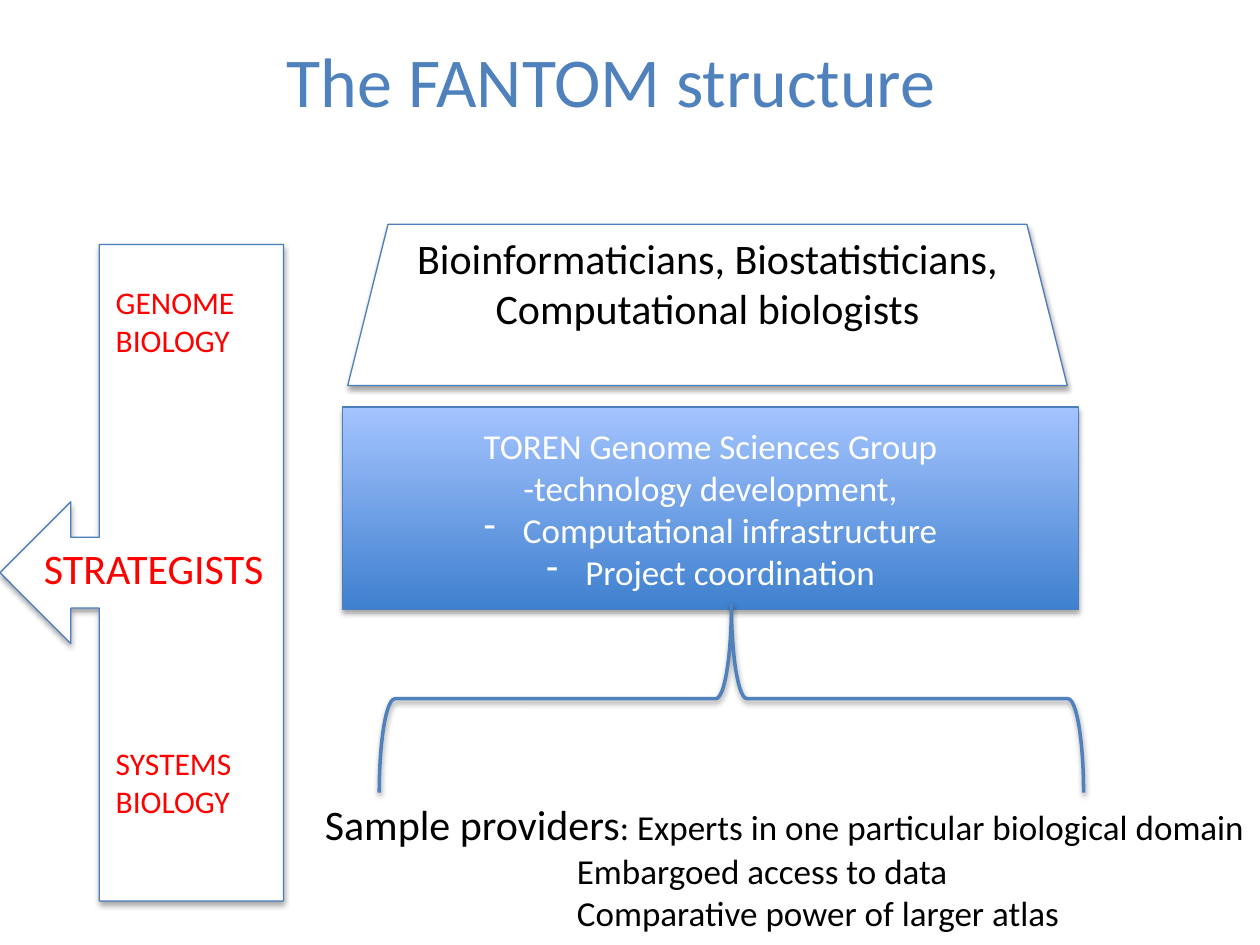
from lxml import etree
from pptx import Presentation
from pptx.dml.color import RGBColor
from pptx.enum.shapes import MSO_SHAPE
from pptx.enum.text import MSO_ANCHOR, MSO_AUTO_SIZE, PP_ALIGN
from pptx.oxml.ns import qn
from pptx.util import Inches, Pt

COLORS = {
    "accent": "4F81BD",
    "outline": "4B7EBC",
    "gradient_bottom": "3F80CE",
    "gradient_top": "A4C4FF",
    "white": "FFFFFF",
    "black": "000000",
    "red": "FF0000",
}


def rgb(name):
    return RGBColor.from_string(COLORS[name])


class StructureSlide:
    """Holds the style and the slide on which the elements are placed."""

    font = "Calibri"

    def __init__(self, slide):
        self.slide = slide

    def shape(self, kind, box, fill=None, line="outline", width=0.75, shadow=35):
        shape = self.slide.shapes.add_shape(kind, *map(Inches, box))
        if fill == "gradient":
            shape.fill.gradient()
            shape.fill.gradient_angle = 90
            for stop, color in zip(shape.fill.gradient_stops, ("gradient_bottom", "gradient_top")):
                stop.color.rgb = rgb(color)
        elif fill:
            shape.fill.solid()
            shape.fill.fore_color.rgb = rgb(fill)
        else:
            shape.fill.background()
        shape.line.color.rgb = rgb(line)
        shape.line.width = Pt(width)
        self.shadow(shape, shadow)
        return shape

    def shadow(self, shape, opacity):
        shape.shadow.inherit = False
        effects = shape._element.spPr.find(qn("a:effectLst"))
        outer = etree.SubElement(effects, qn("a:outerShdw"), blurRad=str(Pt(3.1)),
                                 dist=str(Pt(1.8)), dir="5400000", rotWithShape="0")
        color = etree.SubElement(outer, qn("a:srgbClr"), val=COLORS["black"])
        etree.SubElement(color, qn("a:alpha"), val=str(opacity * 1000))

    def set_lines(self, shape, lines, size, color, align=PP_ALIGN.CENTER):
        frame = shape.text_frame
        frame.text = "\n".join(lines)
        for paragraph in frame.paragraphs:
            paragraph.alignment = align
            for run in paragraph.runs:
                self.format_run(run, size, color)
        return frame.paragraphs

    def format_run(self, run, size, color):
        run.font.name = self.font
        run.font.size = Pt(size)
        run.font.color.rgb = rgb(color)

    def text(self, box, lines, size, color, align=PP_ALIGN.LEFT, wrap=False):
        shape = self.slide.shapes.add_textbox(*map(Inches, box))
        frame = shape.text_frame
        frame.word_wrap = wrap
        if wrap:
            frame.vertical_anchor = MSO_ANCHOR.MIDDLE
        else:
            frame.auto_size = MSO_AUTO_SIZE.SHAPE_TO_FIT_TEXT
        return self.set_lines(shape, lines, size, color, align)

    def indent(self, paragraph, left, bullet=None):
        properties = paragraph._p.get_or_add_pPr()
        properties.set("marL", str(Inches(left)))
        if bullet:
            properties.set("indent", str(-Inches(left)))
            etree.SubElement(properties, qn("a:buChar"), char=bullet)


def main():
    presentation = Presentation()
    presentation.slide_width, presentation.slide_height = Inches(10), Inches(7.5)
    page = StructureSlide(presentation.slides.add_slide(presentation.slide_layouts[6]))

    page.text((0.35, 0.01, 9, 1.25), ["The FANTOM structure"], 40, "accent",
              PP_ALIGN.CENTER, wrap=True)

    group = page.shape(MSO_SHAPE.RECTANGLE, (2.72, 3.23, 5.84, 1.61), "gradient")
    group_lines = page.set_lines(group, [
        "TOREN Genome Sciences Group",
        "-technology development,",
        "Computational infrastructure",
        "Project coordination",
    ], 20, "white")
    for paragraph in group_lines[2:]:
        page.indent(paragraph, 0.31, "-")

    brace = page.shape(MSO_SHAPE.RIGHT_BRACE, (5.06, 2.75, 1.49, 5.59),
                       line="accent", width=2, shadow=38)
    brace.rotation = 270

    providers = page.text((2.48, 6.29, 7.58, 1.18), [
        "Sample providers",
        "Embargoed access to data",
        "Comparative power of larger atlas",
    ], 20, "black")
    providers[0].runs[0].font.size = Pt(24)
    experts = providers[0].add_run()
    experts.text = ": Experts in one particular biological domain"
    page.format_run(experts, 20, "black")
    for paragraph in providers[1:]:
        page.indent(paragraph, 2)

    page.shape(MSO_SHAPE.LEFT_ARROW_CALLOUT, (0, 1.94, 2.25, 5.21), "white")

    analysts = page.shape(MSO_SHAPE.TRAPEZOID, (2.76, 1.78, 5.71, 1.28), "white")
    analysts.text_frame.margin_bottom = Inches(0.45)
    page.set_lines(analysts, ["Bioinformaticians, Biostatisticians, Computational biologists"],
                   24, "black")

    page.text((0.22, 4.26, 2, 0.5), ["STRATEGISTS"], 24, "red", PP_ALIGN.CENTER)
    fields = page.text((0.82, 2.2, 1.15, 4.34), ["GENOME", "BIOLOGY", "SYSTEMS", "BIOLOGY"],
                       18, "red")
    fields[2].space_before = Pt(220)

    presentation.save("out.pptx")


if __name__ == "__main__":
    main()
